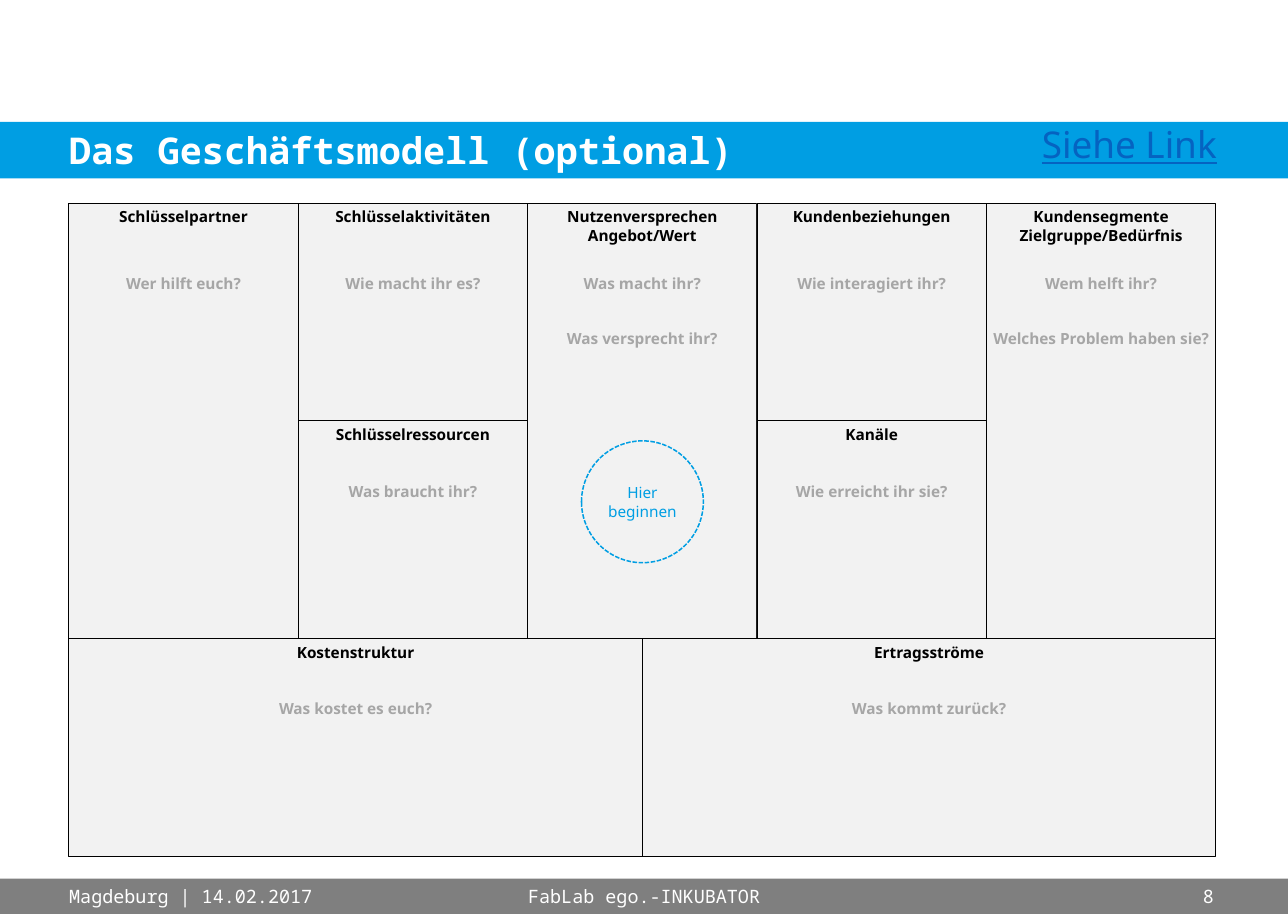
"""Build the business model canvas slide."""
from dataclasses import dataclass
from typing import Optional

from pptx import Presentation
from pptx.dml.color import RGBColor
from pptx.enum.dml import MSO_LINE
from pptx.enum.shapes import MSO_SHAPE
from pptx.enum.text import MSO_ANCHOR, PP_ALIGN
from pptx.util import Cm, Pt

HUES = {"blue": "009EE3", "gray": "7F7F7F", "pale": "F2F2F2", "hint": "A6A6A6",
        "link": "0563C1", "black": "000000", "white": "FFFFFF"}
SANS, MONO = "Noto Sans", "Noto Sans Mono"
WIDTH, HEIGHT = 29.59, 21
LEFT, TOP, COL, ROW = 1.58, 4.67, 5.27, 5
BAND, FOOT = 2.8, 20.19
PAD = 0.1


@dataclass
class Style:
    """Describe how a text looks."""
    size: int
    hue: str
    name: str = SANS
    bold: bool = False
    underline: bool = False
    align: PP_ALIGN = PP_ALIGN.CENTER
    anchor: MSO_ANCHOR = MSO_ANCHOR.TOP
    pad: float = 0
    indent: float = 0
    gap: int = 0


@dataclass
class Box:
    """Hold a place on the slide in centimetres."""
    left: float
    top: float
    width: float
    height: float


@dataclass
class Block:
    """Describe one canvas block in grid units."""
    col: float
    row: int
    cols: float
    rows: int
    heads: list[str]
    asks: list[str]


HEAD = Style(10, "black", bold=True, pad=PAD)
ASK = Style(10, "hint", bold=True, pad=PAD, gap=24)
START = Style(10, "blue", anchor=MSO_ANCHOR.MIDDLE)
TITLE = Style(24, "white", MONO, bold=True, align=PP_ALIGN.LEFT,
              anchor=MSO_ANCHOR.MIDDLE, indent=1.59)
LINK = Style(24, "link", underline=True)

BLOCKS = [
    Block(0, 0, 1, 2, ["Schlüsselpartner"], ["Wer hilft euch?"]),
    Block(1, 0, 1, 1, ["Schlüsselaktivitäten"], ["Wie macht ihr es?"]),
    Block(2, 0, 1, 2, ["Nutzenversprechen", "Angebot/Wert"],
          ["Was macht ihr?", "Was versprecht ihr?"]),
    Block(3, 0, 1, 1, ["Kundenbeziehungen"], ["Wie interagiert ihr?"]),
    Block(4, 0, 1, 2, ["Kundensegmente", "Zielgruppe/Bedürfnis"],
          ["Wem helft ihr?", "Welches Problem haben sie?"]),
    Block(1, 1, 1, 1, ["Schlüsselressourcen"], ["Was braucht ihr?"]),
    Block(3, 1, 1, 1, ["Kanäle"], ["Wie erreicht ihr sie?"]),
    Block(0, 2, 2.5, 1, ["Kostenstruktur"], ["Was kostet es euch?"]),
    Block(2.5, 2, 2.5, 1, ["Ertragsströme"], ["Was kommt zurück?"]),
]
NOTES = [
    (1.59, 6.88, "Magdeburg | 14.02.2017", PP_ALIGN.LEFT),
    (10.81, 7.98, "FabLab ego.-INKUBATOR", PP_ALIGN.CENTER),
    (25.91, 1.98, "8", PP_ALIGN.RIGHT),
]


def color(hue: str) -> RGBColor:
    """Look up a named colour."""
    return RGBColor.from_string(HUES[hue])


def place(box: Box) -> list[int]:
    """Turn a box into slide lengths."""
    return [Cm(side) for side in (box.left, box.top, box.width, box.height)]


def write(shape, lines: list[str], style: Style) -> None:
    """Fill a shape with one paragraph per line."""
    frame = shape.text_frame
    form = {"word_wrap": True, "vertical_anchor": style.anchor,
            "margin_left": Cm(style.pad + style.indent), "margin_right": Cm(style.pad),
            "margin_top": Cm(style.pad), "margin_bottom": Cm(style.pad)}
    for key, value in form.items():
        setattr(frame, key, value)
    face = {"size": Pt(style.size), "name": style.name, "bold": style.bold,
            "underline": style.underline}
    for index, line in enumerate(lines):
        para = frame.paragraphs[0] if index == 0 else frame.add_paragraph()
        para.alignment = style.align
        if index and style.gap:
            para.space_before = Pt(style.gap)
        run = para.add_run()
        run.text = line
        for key, value in face.items():
            setattr(run.font, key, value)
        run.font.color.rgb = color(style.hue)


def draw(slide, kind: MSO_SHAPE, box: Box, fill: Optional[str] = None,
         edge: Optional[str] = None, weight: float = 0.5):
    """Add a plain shape with optional fill and edge."""
    shape = slide.shapes.add_shape(kind, *place(box))
    shape.shadow.inherit = False
    if fill:
        shape.fill.solid()
        shape.fill.fore_color.rgb = color(fill)
    else:
        shape.fill.background()
    if edge:
        shape.line.color.rgb = color(edge)
        shape.line.width = Pt(weight)
    else:
        shape.line.fill.background()
    return shape


def label(slide, box: Box, lines: list[str], style: Style) -> None:
    """Add a text box."""
    write(slide.shapes.add_textbox(*place(box)), lines, style)


def panel(slide, block: Block) -> None:
    """Draw one canvas block with its heading and questions."""
    left, top = LEFT + block.col * COL, TOP + block.row * ROW
    width = block.cols * COL
    card = draw(slide, MSO_SHAPE.RECTANGLE, Box(left, top, width, block.rows * ROW),
                "pale", "black")
    write(card, block.heads, HEAD)
    drop = 1.3 if block.row else 1.52
    tall = 2.5 if len(block.asks) == 1 else 3.48
    label(slide, Box(left, top + drop, width, tall), block.asks, ASK)


def main() -> None:
    """Build and save the slide."""
    deck = Presentation()
    deck.slide_width, deck.slide_height = Cm(WIDTH), Cm(HEIGHT)
    slide = deck.slides.add_slide(deck.slide_layouts[6])
    band = draw(slide, MSO_SHAPE.RECTANGLE, Box(0, BAND, WIDTH, 1.3), "blue")
    write(band, ["Das Geschäftsmodell (optional)"], TITLE)
    label(slide, Box(23.39, BAND, 5.11, 1.3), ["Siehe Link"], LINK)
    draw(slide, MSO_SHAPE.RECTANGLE, Box(0, FOOT, WIDTH, HEIGHT - FOOT), "gray")
    for left, width, text, align in NOTES:
        style = Style(12, "white", MONO, align=align, anchor=MSO_ANCHOR.MIDDLE)
        label(slide, Box(left, FOOT, width, HEIGHT - FOOT), [text], style)
    for block in BLOCKS:
        panel(slide, block)
    ring = draw(slide, MSO_SHAPE.OVAL, Box(13.36, 10.13, 2.8, 2.8), edge="blue", weight=1)
    ring.line.dash_style = MSO_LINE.SQUARE_DOT
    write(ring, ["Hier beginnen"], START)
    deck.save("out.pptx")


if __name__ == "__main__":
    main()
